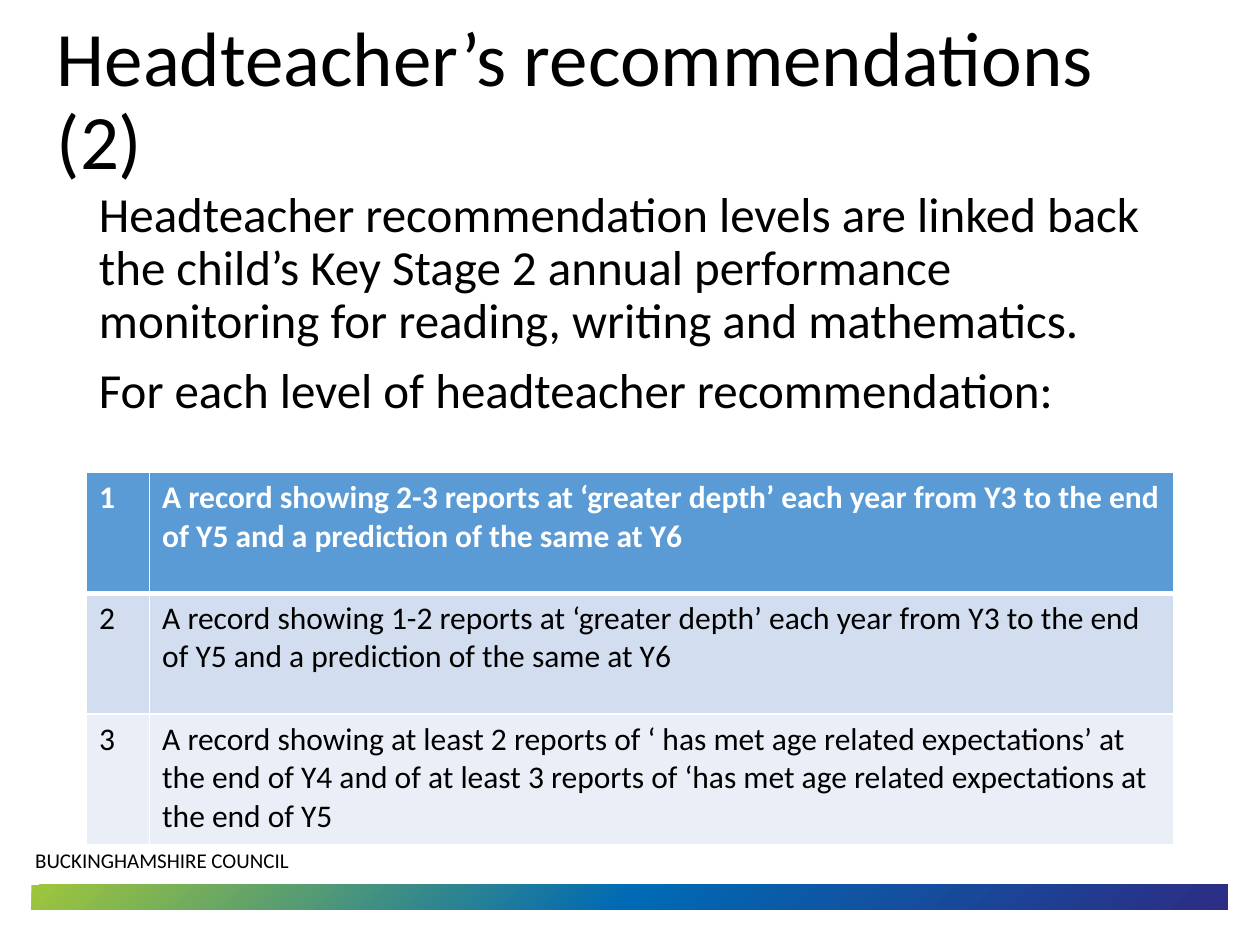
from lxml import etree
from pptx import Presentation
from pptx.dml.color import RGBColor
from pptx.enum import shapes, text
from pptx.oxml import ns
from pptx.util import Pt

FONT = "Calibri"
BLACK = RGBColor(0x00, 0x00, 0x00)
WHITE = RGBColor(0xFF, 0xFF, 0xFF)
HEADER_BLUE = RGBColor(0x5B, 0x9B, 0xD5)
BAND_DARK = RGBColor(0xD2, 0xDE, 0xEF)
BAND_LIGHT = RGBColor(0xEA, 0xEF, 0xF7)
STRIPE_COLOURS = [
    RGBColor(0x2C, 0x2D, 0x84),
    RGBColor(0x00, 0x6A, 0xB4),
    RGBColor(0x9F, 0xC6, 0x3B),
]

TITLE_ONLY = 5
TITLE = "Headteacher’s recommendations (2)"
INTRO = [
    "Headteacher recommendation levels are linked back the child’s Key Stage 2 "
    "annual performance monitoring for reading, writing and mathematics.",
    "For each level of headteacher recommendation:",
]
LEVELS = [
    "A record showing 2-3 reports at ‘greater depth’ each year from Y3 to the end "
    "of Y5 and a prediction of the same at Y6",
    "A record showing 1-2 reports at ‘greater depth’ each year from Y3 to the end "
    "of Y5 and a prediction of the same at Y6",
    "A record showing at least 2 reports of ‘ has met age related expectations’ at "
    "the end of Y4 and of at least 3 reports of ‘has met age related expectations "
    "at the end of Y5",
]
COLUMN_WIDTHS = [36, 585]
ROW_HEIGHTS = [69, 69, 75]
ROW_FILLS = [HEADER_BLUE, BAND_DARK, BAND_LIGHT]


def format_font(font, size, colour=BLACK, bold=False):
    font.name = FONT
    font.size = Pt(size)
    font.bold = bold
    font.color.rgb = colour


def write_paragraphs(frame, lines, size, line_spacing=None, gap=0):
    frame.word_wrap = True
    frame.text = "\n".join(lines)
    for index, para in enumerate(frame.paragraphs):
        para.alignment = text.PP_ALIGN.LEFT
        para.line_spacing = line_spacing
        para.space_before = Pt(gap if index else 0)
        for span in para.runs:
            format_font(span.font, size)


def add_title(page):
    title = page.shapes.title
    title.left, title.top, title.width, title.height = Pt(25.2), Pt(28.8), Pt(666), Pt(60)
    frame = title.text_frame
    write_paragraphs(frame, [TITLE], 44, 0.9)
    frame.auto_size = text.MSO_AUTO_SIZE.NONE
    frame.vertical_anchor = text.MSO_ANCHOR.MIDDLE


def add_text(page, left, top, width, height, lines, size, line_spacing=None, gap=0):
    box = page.shapes.add_textbox(Pt(left), Pt(top), Pt(width), Pt(height))
    write_paragraphs(box.text_frame, lines, size, line_spacing, gap)


def add_stripe(page):
    stripe = page.shapes.add_shape(
        shapes.MSO_SHAPE.RECTANGLE, Pt(18), Pt(505.5), Pt(683.5), Pt(14.5))
    stripe.shadow.inherit = False
    stripe.line.fill.background()
    stripe.fill.gradient()
    # Three stops spreading from the bottom right corner
    gradient = stripe.fill._xPr.find(ns.qn("a:gradFill"))
    for child in list(gradient):
        gradient.remove(child)
    stops = etree.SubElement(gradient, ns.qn("a:gsLst"))
    for index, colour in enumerate(STRIPE_COLOURS):
        stop = etree.SubElement(stops, ns.qn("a:gs"), pos=str(index * 50000))
        etree.SubElement(stop, ns.qn("a:srgbClr"), val=str(colour))
    spread = etree.SubElement(gradient, ns.qn("a:path"), path="circle")
    etree.SubElement(spread, ns.qn("a:fillToRect"), l="100000", t="100000")


def set_borders(cell, top, bottom):
    properties = cell._tc.get_or_add_tcPr()
    for side, width in (("L", 1), ("R", 1), ("T", top), ("B", bottom)):
        line = etree.SubElement(properties, ns.qn(f"a:ln{side}"), w=str(Pt(width)))
        fill = etree.SubElement(line, ns.qn("a:solidFill"))
        etree.SubElement(fill, ns.qn("a:srgbClr"), val=str(WHITE))


def add_levels_table(page):
    table = page.shapes.add_table(
        len(LEVELS), len(COLUMN_WIDTHS), Pt(49.5), Pt(270),
        Pt(sum(COLUMN_WIDTHS)), Pt(sum(ROW_HEIGHTS))).table
    for column, width in zip(table.columns, COLUMN_WIDTHS):
        column.width = Pt(width)
    for index, level in enumerate(LEVELS):
        table.rows[index].height = Pt(ROW_HEIGHTS[index])
        header = index == 0
        for cell, words in zip(table.rows[index].cells, (str(index + 1), level)):
            cell.text = words
            format_font(cell.text_frame.paragraphs[0].runs[0].font, 18,
                        WHITE if header else BLACK, header)
            # The rule under the header row is thicker
            set_borders(cell, top=3 if index == 1 else 1, bottom=3 if header else 1)
            cell.fill.solid()
            cell.fill.fore_color.rgb = ROW_FILLS[index]


def main():
    deck = Presentation()
    deck.slide_width, deck.slide_height = Pt(720), Pt(540)
    page = deck.slides.add_slide(deck.slide_layouts[TITLE_ONLY])

    # Footer
    add_stripe(page)
    add_text(page, 13, 481, 346, 22, ["BUCKINGHAMSHIRE COUNCIL"], 12)

    # Content
    add_title(page)
    add_text(page, 49.5, 105, 621, 381, INTRO, 28, 0.9, 10)
    add_levels_table(page)

    deck.save("out.pptx")


if __name__ == "__main__":
    main()
